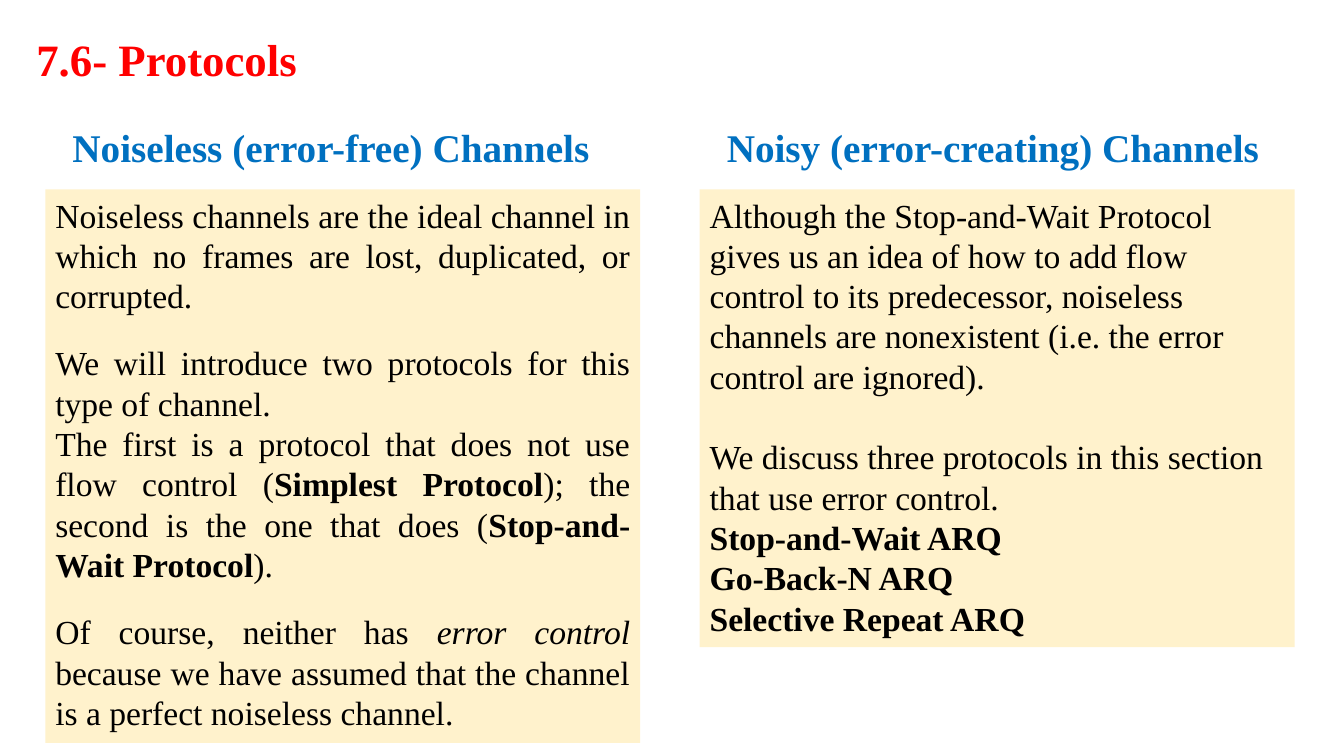
from pptx import Presentation
from pptx.dml.color import RGBColor
from pptx.enum.shapes import MSO_SHAPE as Preset
from pptx.enum.text import MSO_ANCHOR as Anchor, MSO_AUTO_SIZE as AutoSize, PP_ALIGN as Align
from pptx.util import Inches, Pt

COLORS = {"title": "FF0000", "heading": "0070C0", "body": "000000", "panel": "FFF2CC"}
FONT = "Times New Roman"
COLUMN_STEP = 6.49
HEADING_LEFT, HEADING_TOP = 0.62, 1.17
PANEL_LEFT, PANEL_TOP = 0.45, 1.88
SMALL_GAP, FULL_GAP = 19.2, 28.8
PLAIN, BOLD, ITALIC = {}, {"bold": True}, {"italic": True}

# Each paragraph is (space before in points, [(text, format), ...]).
CHANNELS = [
    {
        "heading": "Noiseless (error-free) Channels",
        "align": Align.JUSTIFY,
        "height": 5.49,
        "paragraphs": [
            (0, [("Noiseless channels are the ideal channel in which no frames are lost, "
                  "duplicated, or corrupted.", PLAIN)]),
            (SMALL_GAP, [("We will introduce two protocols for this type of channel.", PLAIN)]),
            (0, [("The first is a protocol that does not use flow control (", PLAIN),
                 ("Simplest Protocol", BOLD),
                 ("); the second is the one that does (", PLAIN),
                 ("Stop-and-Wait Protocol", BOLD),
                 (").", PLAIN)]),
            (SMALL_GAP, [("Of course, neither has ", PLAIN),
                         ("error control ", ITALIC),
                         ("because we have assumed that the channel is a perfect "
                          "noiseless channel.", PLAIN)]),
        ],
    },
    {
        "heading": "Noisy (error-creating) Channels",
        "align": Align.LEFT,
        "height": 4.54,
        "paragraphs": [
            (0, [("Although the Stop-and-Wait Protocol gives us an idea of how to add flow "
                  "control to its predecessor, noiseless channels are nonexistent (i.e. the "
                  "error control are ignored).", PLAIN)]),
            (FULL_GAP, [("We discuss three protocols in this section that use error control.",
                         PLAIN)]),
            (0, [("Stop-and-Wait ARQ", BOLD)]),
            (0, [("Go-Back-N ARQ", BOLD)]),
            (0, [("Selective Repeat ARQ", BOLD)]),
        ],
    },
]


def box(left, top, width, height):
    return [Inches(length) for length in (left, top, width, height)]


def prepare_frame(frame):
    settings = {"word_wrap": True, "vertical_anchor": Anchor.TOP,
                "auto_size": AutoSize.SHAPE_TO_FIT_TEXT}
    for name, value in settings.items():
        setattr(frame, name, value)


def add_run(paragraph, text, size, color, **emphasis):
    run = paragraph.add_run()
    run.text = text
    for name, value in {"name": FONT, "size": Pt(size), **emphasis}.items():
        setattr(run.font, name, value)
    run.font.color.rgb = RGBColor.from_string(COLORS[color])


def fill_title(slide, text):
    title = slide.shapes.title
    title.left, title.top, title.width, title.height = box(0.26, 0, 12.39, 0.82)
    prepare_frame(title.text_frame)
    line = title.text_frame.paragraphs[0]
    line.alignment, line.line_spacing = Align.JUSTIFY, 1.5
    add_run(line, text, 32, "title", bold=True)


def add_heading(slide, column, text):
    left = HEADING_LEFT + column * COLUMN_STEP
    frame = slide.shapes.add_textbox(*box(left, HEADING_TOP, 5.58, 0.57)).text_frame
    prepare_frame(frame)
    frame.paragraphs[0].alignment = Align.JUSTIFY
    add_run(frame.paragraphs[0], text, 28, "heading", bold=True)


def add_panel(slide, column, height, align, paragraphs):
    left = PANEL_LEFT + column * COLUMN_STEP
    panel = slide.shapes.add_shape(Preset.RECTANGLE, *box(left, PANEL_TOP, 5.9, height))
    panel.shadow.inherit = False
    panel.fill.solid()
    panel.fill.fore_color.rgb = RGBColor.from_string(COLORS["panel"])
    panel.line.fill.background()
    frame = panel.text_frame
    prepare_frame(frame)
    for index, (gap, runs) in enumerate(paragraphs):
        paragraph = frame.add_paragraph() if index else frame.paragraphs[0]
        paragraph.alignment = align
        if gap:
            paragraph.space_before = Pt(gap)
        for text, emphasis in runs:
            add_run(paragraph, text, 24, "body", **emphasis)


def main():
    deck = Presentation()
    deck.slide_width, deck.slide_height = Inches(13.33), Inches(7.5)
    slide = deck.slides.add_slide(deck.slide_layouts[5])
    fill_title(slide, "7.6- Protocols")
    for column, channel in enumerate(CHANNELS):
        add_heading(slide, column, channel["heading"])
        add_panel(slide, column, channel["height"], channel["align"], channel["paragraphs"])
    deck.save("out.pptx")


if __name__ == "__main__":
    main()
